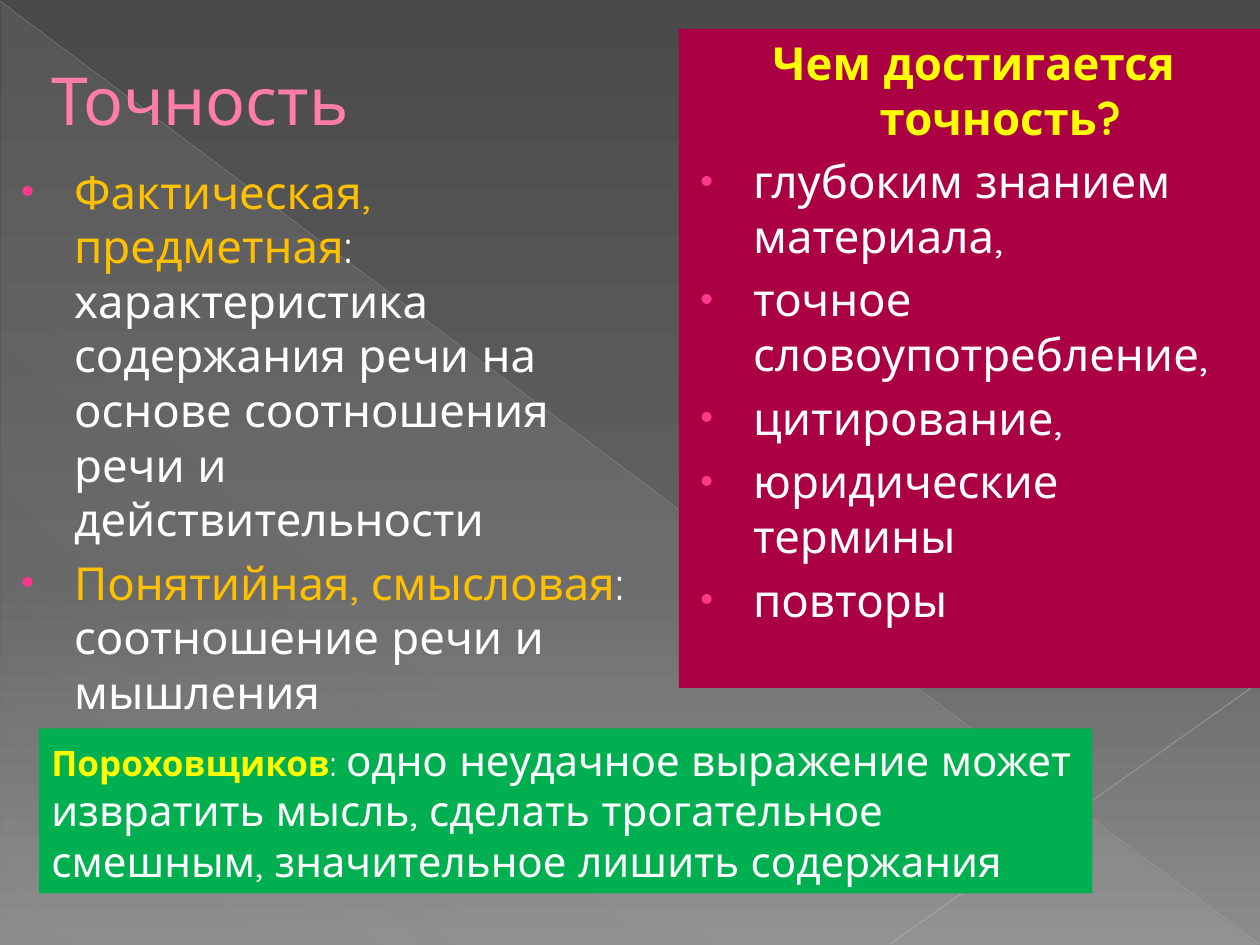
from lxml.etree import SubElement
from pptx import Presentation
from pptx.dml.color import RGBColor
from pptx.enum.shapes import MSO_CONNECTOR, MSO_SHAPE
from pptx.enum.text import MSO_ANCHOR, MSO_AUTO_SIZE, PP_ALIGN
from pptx.oxml.ns import qn
from pptx.util import Pt

FONT = "Quicksand"
WHITE = RGBColor(0xFF, 0xFF, 0xFF)
YELLOW = RGBColor(0xFF, 0xFF, 0x00)
AMBER = RGBColor(0xFF, 0xC0, 0x00)
PINK = RGBColor(0xFF, 0x7D, 0xA7)
PINK_EDGE = RGBColor(0xB1, 0x27, 0x61)
BULLET_PINK = RGBColor(0xFF, 0x38, 0x8C)
CRIMSON = RGBColor(0xAB, 0x00, 0x43)
GREEN = RGBColor(0x00, 0xB0, 0x50)
SHEEN = RGBColor(0xD2, 0xD2, 0xD2)
DARK_GRAY = RGBColor(0x4A, 0x4A, 0x4A)
MID_GRAY = RGBColor(0x62, 0x62, 0x62)
LIGHT_GRAY = RGBColor(0x8C, 0x8C, 0x8C)
LONG_LINE = RGBColor(0xBF, 0xBF, 0xBF)
SHORT_LINE = RGBColor(0xC6, 0xC6, 0xC6)


def set_gradient(fill, owner, angle, stops):
    """Give fill, held in the owner element, stops of (percent, colour, opacity percent)."""
    fill.gradient()
    gradient = next(owner.iter(qn("a:gradFill")))
    for child in list(gradient):
        gradient.remove(child)
    stop_list = SubElement(gradient, qn("a:gsLst"))
    for position, color, opacity in stops:
        stop = SubElement(stop_list, qn("a:gs"), pos=str(position * 1000))
        tint = SubElement(stop, qn("a:srgbClr"), val=str(color))
        SubElement(tint, qn("a:alpha"), val=str(opacity * 1000))
    SubElement(gradient, qn("a:lin"), ang=str(angle * 60000), scaled="0")


def write(paragraph, text, size=26, color=WHITE, bold=False):
    run = paragraph.add_run()
    run.text = text
    run.font.name = FONT
    run.font.size = Pt(size)
    run.font.bold = bold
    run.font.color.rgb = color
    return run


prs = Presentation()
prs.slide_width, prs.slide_height = Pt(720), Pt(540)
slide = prs.slides.add_slide(prs.slide_layouts[5])
shapes = slide.shapes

# Backdrop
set_gradient(slide.background.fill, slide._element, 90,
             [(0, DARK_GRAY, 100), (60, MID_GRAY, 100), (100, LIGHT_GRAY, 100)])
sheen = shapes.add_shape(MSO_SHAPE.RIGHT_TRIANGLE, Pt(0.7), Pt(1.4), Pt(718.6), Pt(538.6))
sheen.shadow.inherit = False
sheen.line.fill.background()
set_gradient(sheen.fill, sheen._element.spPr, 133,
             [(0, SHEEN, 10), (70, SHEEN, 8), (100, SHEEN, 1)])

for x1, y1, x2, y2, color, width, opacity in [
    (0, 0.7, 719.3, 539.3, LONG_LINE, 0.39, 35),
    (720, 389.5, 509, 539.3, SHORT_LINE, 0.47, 45),
]:
    diagonal = shapes.add_connector(MSO_CONNECTOR.STRAIGHT, Pt(x1), Pt(y1), Pt(x2), Pt(y2))
    diagonal.line.width = Pt(width)
    diagonal.line.color.rgb = color
    tint = next(diagonal._element.spPr.iter(qn("a:srgbClr")))
    SubElement(tint, qn("a:alpha"), val=str(opacity * 1000))
    SubElement(diagonal._element.spPr, qn("a:effectLst"))

# Title, brought in front of the backdrop
title = shapes.title
shapes._spTree.append(title._element)
title.left, title.top, title.width, title.height = Pt(22.3), Pt(16.5), Pt(194.4), Pt(80.6)
title.text_frame.vertical_anchor = MSO_ANCHOR.MIDDLE
title.text_frame.auto_size = MSO_AUTO_SIZE.NONE
heading = title.text_frame.paragraphs[0]
heading.alignment = PP_ALIGN.LEFT
heading_run = write(heading, "Точность", size=37.8, color=PINK)
edge = SubElement(heading_run.font._element, qn("a:ln"), w=str(Pt(0.5)))
edge_fill = SubElement(edge, qn("a:solidFill"))
SubElement(edge_fill, qn("a:srgbClr"), val=str(PINK_EDGE))
heading_run.font._element.insert(0, edge)

# Columns: each paragraph is (bulleted, [(text, format), ...])
kinds = [
    (True, [("Фактическая, предметная", {"color": AMBER}),
            (": характеристика содержания речи на основе соотношения речи и действительности", {})]),
    (True, [("Понятийная, смысловая", {"color": AMBER}),
            (": соотношение речи и мышления", {})]),
]
means = [(False, [("Чем достигается точность?", {"color": YELLOW, "bold": True})])]
means += [(True, [(text, {})]) for text in (
    "глубоким знанием материала,", "точное словоупотребление,", "цитирование,",
    "юридические термины", "повторы")]

for left, top, width, height, back, paragraphs in [
    (0, 90, 376.6, 303.8, None, kinds),
    (388, 16.5, 332, 376.6, CRIMSON, means),
]:
    column = shapes.add_textbox(Pt(left), Pt(top), Pt(width), Pt(height))
    if back is not None:
        column.fill.solid()
        column.fill.fore_color.rgb = back
    frame = column.text_frame
    frame.word_wrap = True
    for index, (bulleted, runs) in enumerate(paragraphs):
        paragraph = frame.add_paragraph() if index else frame.paragraphs[0]
        properties = paragraph._p.get_or_add_pPr()
        properties.set("marL", str(Pt(35.3)))
        properties.set("indent", str(Pt(-30.2)))
        if bulleted:
            bullet_color = SubElement(properties, qn("a:buClr"))
            SubElement(bullet_color, qn("a:srgbClr"), val=str(BULLET_PINK))
            SubElement(properties, qn("a:buSzPct"), val="80000")
            SubElement(properties, qn("a:buFont"), typeface="Arial")
            SubElement(properties, qn("a:buChar"), char="•")
        else:
            paragraph.alignment = PP_ALIGN.CENTER
        if index:
            paragraph.space_before = Pt(5.2)
        for text, style in runs:
            write(paragraph, text, **style)

# Quotation
quotation = shapes.add_textbox(Pt(22.3), Pt(416.2), Pt(602), Pt(94.3))
quotation.fill.solid()
quotation.fill.fore_color.rgb = GREEN
quotation.text_frame.word_wrap = True
quotation.text_frame.auto_size = MSO_AUTO_SIZE.SHAPE_TO_FIT_TEXT
saying = quotation.text_frame.paragraphs[0]
write(saying, "Пороховщиков", size=20, color=YELLOW, bold=True)
write(saying, ": ", size=20)
write(saying, "одно неудачное выражение может извратить мысль, сделать трогательное "
      "смешным, значительное лишить содержания", size=24)

prs.save("out.pptx")
